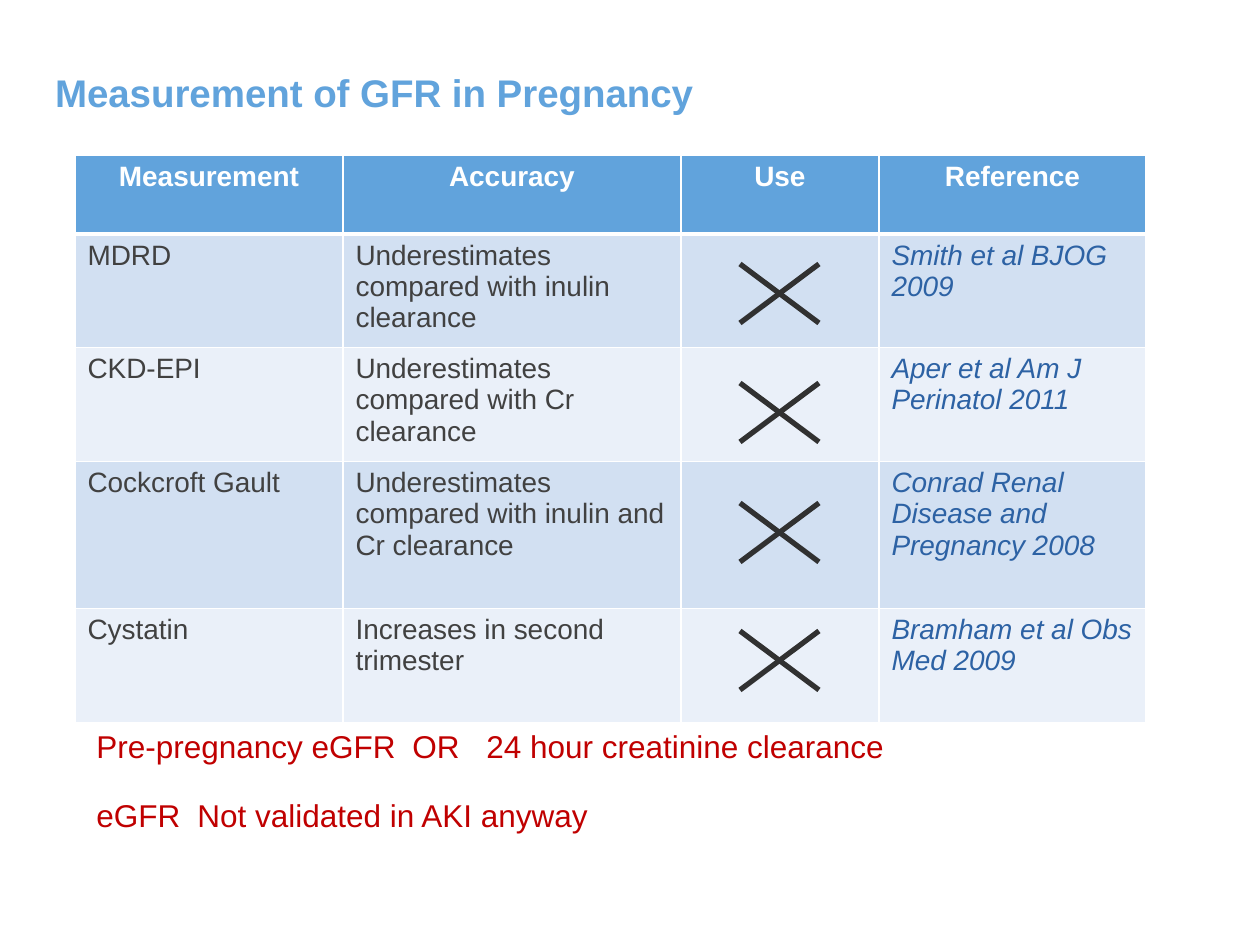
from lxml.etree import SubElement
from pptx import Presentation
from pptx.dml.color import RGBColor
from pptx.enum.shapes import MSO_CONNECTOR as Connector
from pptx.enum.text import MSO_ANCHOR as Anchor, PP_ALIGN as Align
from pptx.oxml.ns import qn
from pptx.util import Emu, Pt

SCALE = 914400 // 126
BLUE, WHITE, DARK, RED = "61A3DC", "FFFFFF", "414141", "C00000"
LINK_BLUE, CROSS = "2D62A4", "313131"
BANDS = "D2E0F2", "EAF0F9"

HEADINGS = "Measurement", "Accuracy", "Use", "Reference"
ROWS = [
    ("MDRD", "Underestimates compared with inulin clearance", "Smith et al BJOG 2009"),
    ("CKD-EPI", "Underestimates compared with Cr clearance", "Aper et al Am J Perinatol 2011"),
    ("Cockcroft Gault", "Underestimates compared with inulin and Cr clearance",
     "Conrad Renal Disease and Pregnancy 2008"),
    ("Cystatin", "Increases in second trimester", "Bramham et al Obs Med 2009"),
]
COLUMN_WIDTHS = 268, 338, 198, 267
ROW_HEIGHTS = 79, 113, 114, 147, 114
CROSS_TOPS = 264, 383, 503, 631


def px(length):
    return Emu(length * SCALE)


def color(value):
    return RGBColor.from_string(value)


class SlideBuilder:
    """Hold the slide and its text style, and add each kind of element."""

    font = "Arial"

    def __init__(self, slide):
        self.slide = slide

    def add_text(self, paragraph, text, size, ink, bold=False, italic=False):
        run = paragraph.add_run()
        run.text = text
        run.font.name, run.font.size = self.font, Pt(size)
        run.font.bold, run.font.italic = bold, italic
        run.font.color.rgb = color(ink)

    def text_box(self, left, top, width, height):
        frame = self.slide.shapes.add_textbox(px(left), px(top), px(width), px(height)).text_frame
        frame.word_wrap = True
        return frame

    def title(self, text):
        frame = self.text_box(55, 29, 1042, 86)
        frame.margin_left = frame.margin_right = frame.margin_top = frame.margin_bottom = 0
        frame.vertical_anchor = Anchor.BOTTOM
        self.add_text(frame.paragraphs[0], text, 22, BLUE, bold=True)

    def note(self, top, text, stops):
        paragraph = self.text_box(84, top, 1104, 50).paragraphs[0]
        tabs = SubElement(paragraph._p.get_or_add_pPr(), qn("a:tabLst"))
        for stop in stops:
            SubElement(tabs, qn("a:tab"), pos=str(px(stop)), algn="l")
        self.add_text(paragraph, text, 18, RED)

    def cell(self, cell, fill, top_width=1, bottom_width=1):
        properties = cell._tc.get_or_add_tcPr()
        for side, width in zip("LRTB", (1, 1, top_width, bottom_width)):
            border = SubElement(properties, qn(f"a:ln{side}"), w=str(Pt(width)))
            SubElement(SubElement(border, qn("a:solidFill")), qn("a:srgbClr"), val=WHITE)
        cell.fill.solid()
        cell.fill.fore_color.rgb = color(fill)
        return cell.text_frame.paragraphs[0]

    def table(self, left, top):
        table = self.slide.shapes.add_table(
            len(ROW_HEIGHTS), len(COLUMN_WIDTHS), px(left), px(top),
            px(sum(COLUMN_WIDTHS)), px(sum(ROW_HEIGHTS))).table
        for column, width in zip(table.columns, COLUMN_WIDTHS):
            column.width = px(width)
        for row, height in zip(table.rows, ROW_HEIGHTS):
            row.height = px(height)
        for column, heading in enumerate(HEADINGS):
            paragraph = self.cell(table.cell(0, column), BLUE, bottom_width=3)
            paragraph.alignment = Align.CENTER
            self.add_text(paragraph, heading, 16, WHITE, bold=True)
        for row, (measurement, accuracy, reference) in enumerate(ROWS, 1):
            for column, text in enumerate((measurement, accuracy, "", reference)):
                paragraph = self.cell(table.cell(row, column), BANDS[(row - 1) % 2],
                                      top_width=3 if row == 1 else 1)
                is_reference = column == 3
                if text:
                    self.add_text(paragraph, text, 16, LINK_BLUE if is_reference else DARK,
                                  italic=is_reference)

    def line(self, start, end):
        connector = self.slide.shapes.add_connector(
            Connector.STRAIGHT, *map(px, start), *map(px, end))
        connector.line.color.rgb = color(CROSS)
        connector.line.width = Pt(3)
        SubElement(connector._element.spPr, qn("a:effectLst"))

    def cross(self, left, top, width=79, height=59):
        right, bottom = left + width, top + height
        self.line((left, top), (right, bottom))
        self.line((right, top), (left, bottom))


def main():
    presentation = Presentation()
    presentation.slide_width, presentation.slide_height = px(1260), px(945)
    builder = SlideBuilder(presentation.slides.add_slide(presentation.slide_layouts[6]))
    builder.title("Measurement of GFR in Pregnancy")
    builder.note(721, "Pre-pregnancy eGFR\tOR\t24 hour creatinine clearance", (316, 390))
    builder.table(75, 155)
    for top in CROSS_TOPS:
        builder.cross(740, top)
    builder.note(790, "eGFR\tNot validated in AKI anyway", (101,))
    presentation.save("out.pptx")


if __name__ == "__main__":
    main()
